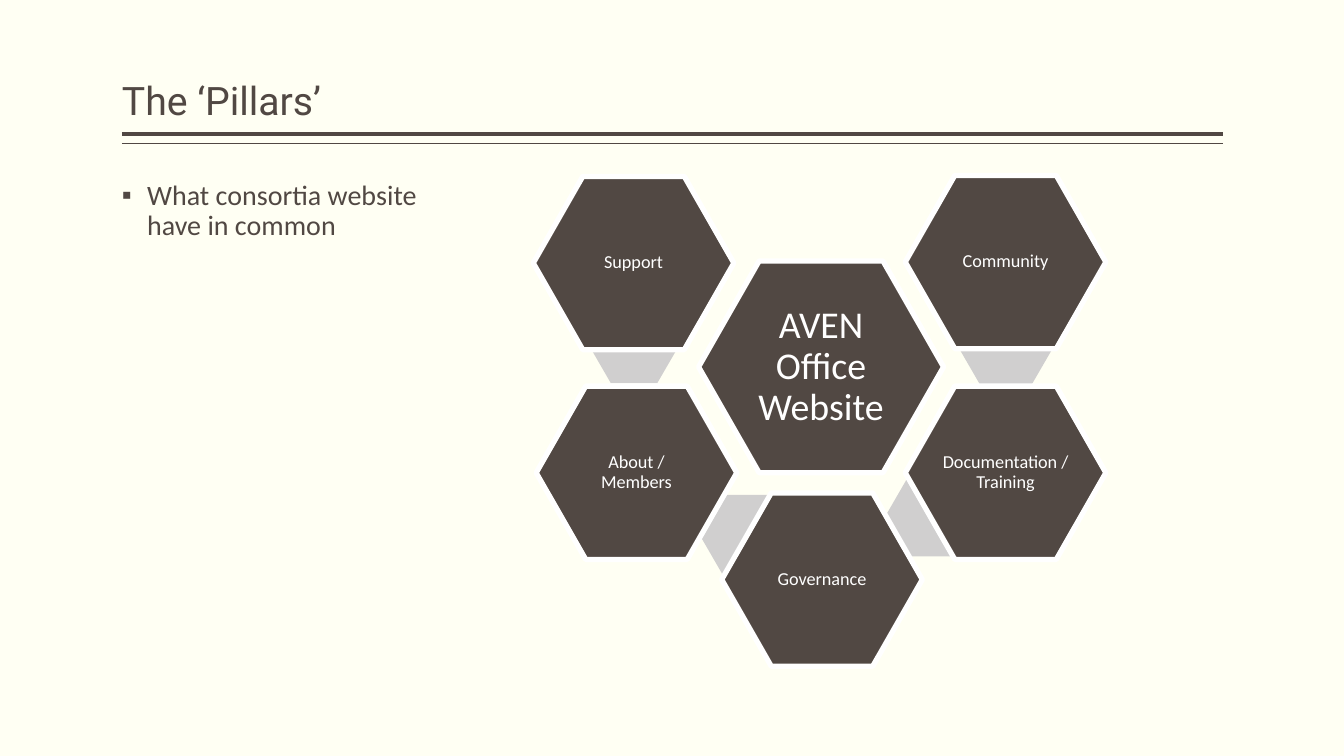
from dataclasses import dataclass
from typing import Optional

from lxml import etree
from pptx import Presentation
from pptx.dml.color import RGBColor
from pptx.enum import shapes, text
from pptx.oxml import ns
from pptx.util import Pt

BROWN = RGBColor(0x51, 0x48, 0x43)
GREY = RGBColor(0xD0, 0xCF, 0xCF)
WHITE = RGBColor(0xFF, 0xFF, 0xFF)
CREAM = RGBColor(0xFF, 0xFF, 0xF3)

LEFT, CONTENT_WIDTH = 87.1, 786.2
NODE_SIZE = (143.3, 123.8)
LINK_SIZE = (66.2, 56.9)
Point = tuple[float, float]


@dataclass
class Pillar:
    label: str
    corner: Point
    link_corner: Optional[Point] = None
    size: Point = NODE_SIZE
    font_size: float = 13
    inset: float = 1.5


# Listed from back to front; a link lies just behind its own pillar.
PILLARS = [
    Pillar("AVEN Office Website", (499, 186.5), size=(175, 151.2), font_size=27, inset=3),
    Pillar("Support", (380.9, 126), (419.8, 216.7)),
    Pillar("Community", (646.6, 125.3), (685.4, 221)),
    Pillar("Documentation / Training", (646.6, 275.8), (632.2, 340.6)),
    Pillar("Governance", (515.5, 352.1), (499.7, 353.5)),
    Pillar("About / Members", (383, 275.8)),
]


def style_font(para, name: str, size: float, color: RGBColor) -> None:
    for span in para.runs:
        span.font.name = name
        span.font.size = Pt(size)
        span.font.color.rgb = color


def set_insets(frame, horizontal: float, vertical: float) -> None:
    frame.margin_left = frame.margin_right = Pt(horizontal)
    frame.margin_top = frame.margin_bottom = Pt(vertical)


def fill_placeholder(box, top: float, height: float, wording: str, font: str,
                     size: float, anchor):
    """Place a placeholder, write its text and return its paragraph."""
    box.left, box.top = Pt(LEFT), Pt(top)
    box.width, box.height = Pt(CONTENT_WIDTH), Pt(height)
    frame = box.text_frame
    frame.auto_size = text.MSO_AUTO_SIZE.NONE
    frame.vertical_anchor = anchor
    set_insets(frame, 0, 3.6)
    para = frame.paragraphs[0]
    para.text = wording
    para.alignment = text.PP_ALIGN.LEFT
    para.line_spacing = 0.9
    style_font(para, font, size, BROWN)
    return para


def add_bullet(para, symbol: str, indent: float) -> None:
    properties = para._p.get_or_add_pPr()
    properties.set("marL", str(Pt(indent)))
    properties.set("indent", str(-Pt(indent)))
    etree.SubElement(properties, ns.qn("a:buChar")).set("char", symbol)


def add_rule(page, y: float, weight: float) -> None:
    rule = page.shapes.add_connector(
        shapes.MSO_CONNECTOR.STRAIGHT, Pt(LEFT), Pt(y), Pt(LEFT + CONTENT_WIDTH), Pt(y))
    rule.line.color.rgb = BROWN
    rule.line.width = Pt(weight)
    etree.SubElement(rule._element.spPr, ns.qn("a:effectLst"))


def add_hexagon(page, corner: Point, size: Point, adjust: float, color: RGBColor):
    hexagon = page.shapes.add_shape(
        shapes.MSO_SHAPE.HEXAGON, *(Pt(length) for length in corner + size))
    hexagon.adjustments[0] = adjust
    hexagon.shadow.inherit = False
    hexagon.fill.solid()
    hexagon.fill.fore_color.rgb = color
    return hexagon


def add_pillar(page, pillar: Pillar) -> None:
    if pillar.link_corner:
        link = add_hexagon(page, pillar.link_corner, LINK_SIZE, 0.289, GREY)
        link.line.fill.background()
    hexagon = add_hexagon(page, pillar.corner, pillar.size, 0.286, BROWN)
    hexagon.line.color.rgb = WHITE
    hexagon.line.width = Pt(3.78)
    frame = hexagon.text_frame
    frame.word_wrap = True
    frame.vertical_anchor = text.MSO_ANCHOR.MIDDLE
    set_insets(frame, pillar.inset, pillar.inset)
    para = frame.paragraphs[0]
    para.text = pillar.label
    para.alignment = text.PP_ALIGN.CENTER
    para.line_spacing = 0.9
    style_font(para, "Calibri", pillar.font_size, WHITE)


def main() -> None:
    deck = Presentation()
    deck.slide_width, deck.slide_height = Pt(960), Pt(540)
    page = deck.slides.add_slide(deck.slide_layouts[1])
    page.background.fill.solid()
    page.background.fill.fore_color.rgb = CREAM

    add_rule(page, 95.8, 3)
    add_rule(page, 102.7, 1)
    fill_placeholder(page.shapes.title, 5.8, 86.4, "The ‘Pillars’",
                     "Roboto", 28, text.MSO_ANCHOR.BOTTOM)
    point = fill_placeholder(page.placeholders[1], 126, 360,
                             "What consortia website\vhave in common",
                             "Calibri", 20, text.MSO_ANCHOR.TOP)
    point.space_before = Pt(18)
    add_bullet(point, "▪", 18)
    for pillar in PILLARS:
        add_pillar(page, pillar)
    deck.save("out.pptx")


if __name__ == "__main__":
    main()
